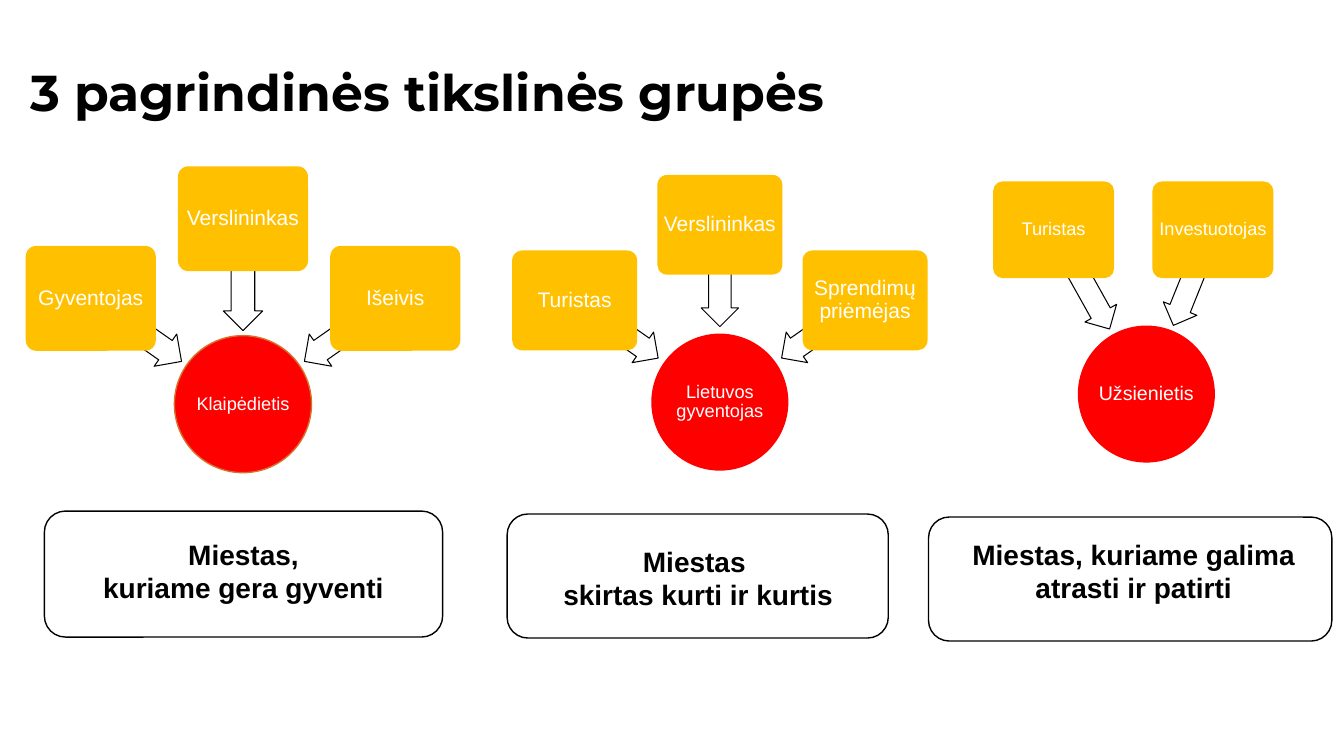
from pptx import Presentation
from pptx.dml.color import RGBColor
from pptx.enum.shapes import MSO_SHAPE as Kind
from pptx.enum.text import MSO_ANCHOR as Anchor, PP_ALIGN as Align
from pptx.util import Inches, Pt

# Content: cards and arrows are given from the hub's centre, in inches
TITLE = "3 pagrindinės tikslinės grupės"
GROUPS = [
    dict(hub="Klaipėdietis", at=(2.41, 4.01), size=13, edge="rim",
         card=(1.29, 1.04), type=15, arrow=0.39,
         cards=[("Gyventojas", -1.51, -1.05), ("Verslininkas", 0, -1.84),
                ("Išeivis", 1.51, -1.05)],
         arrows=[(-1.06, -0.74, 1.1, 215), (0, -1.28, 1.1, 270),
                 (1.06, -0.74, 1.1, 325)]),
    dict(hub="Lietuvos gyventojas", at=(7.14, 3.99), size=13, edge=None,
         card=(1.24, 0.99), type=15, arrow=0.37,
         cards=[("Turistas", -1.44, -1.01), ("Verslininkas", 0, -1.76),
                ("Sprendimų priėmėjas", 1.44, -1.01)],
         arrows=[(-1.03, -0.73, 1.02, 215), (0, -1.26, 1.02, 270),
                 (1.03, -0.73, 1.02, 325)]),
    dict(hub="Užsienietis", at=(11.37, 3.91), size=14, edge=None,
         card=(1.2, 0.96), type=13, arrow=0.36,
         cards=[("Turistas", -0.92, -1.63), ("Investuotojas", 0.66, -1.63)],
         arrows=[(-0.64, -1.14, 1.13, 240.8), (0.46, -1.16, 1.03, 291.9)]),
]
# Lines of text, text box, frame
GOALS = [
    (["Miestas,", "kuriame gera gyventi"],
     (0.49, 5.28, 3.85, 0.77), (0.44, 5.07, 3.95, 1.25)),
    (["Miestas ", "skirtas kurti ir kurtis"],
     (5.1, 5.35, 3.65, 0.77), (5.03, 5.1, 3.78, 1.23)),
    (["Miestas, kuriame galima atrasti ir patirti"],
     (9.46, 5.28, 3.57, 0.77), (9.21, 5.13, 4, 1.23)),
]
HUB = 1.36
COLORS = dict(hub="FF0000", rim="D7712C", card="FFC000",
              ink="000000", light="FFFFFF")

deck = Presentation()
deck.slide_width, deck.slide_height = Inches(13.33), Inches(7.5)
slide = deck.slides.add_slide(deck.slide_layouts[6])


def color(name):
    return RGBColor.from_string(COLORS[name])


def write(shape, lines, size, tone, font="Arial", bold=False,
          align=Align.CENTER, gap=0.9, anchor=Anchor.MIDDLE, inset=None):
    frame = shape.text_frame
    frame.word_wrap, frame.vertical_anchor = True, anchor
    if inset is not None:
        for side in ("left", "right", "top", "bottom"):
            setattr(frame, f"margin_{side}", Inches(inset))
    for i, line in enumerate(lines):
        para = frame.paragraphs[0] if i == 0 else frame.add_paragraph()
        para.alignment, para.line_spacing = align, gap
        run = para.add_run()
        run.text = line
        form = dict(name=font, size=Pt(size), bold=bold)
        for key, value in form.items():
            setattr(run.font, key, value)
        run.font.color.rgb = color(tone)


def draw(kind, box, fill=None, edge=None, width=1, adjust=()):
    shape = slide.shapes.add_shape(kind, *map(Inches, box))
    shape.shadow.inherit = False
    if fill:
        shape.fill.solid()
        shape.fill.fore_color.rgb = color(fill)
    else:
        shape.fill.background()
    if edge:
        shape.line.color.rgb = color(edge)
        shape.line.width = Pt(width)
    else:
        shape.line.fill.background()
    for i, value in enumerate(adjust):
        shape.adjustments[i] = value
    return shape


def label(box, lines, *args, **form):
    write(slide.shapes.add_textbox(*map(Inches, box)), lines, *args, **form)


def around(hub, dx, dy, wide, high):
    return hub[0] + dx - wide / 2, hub[1] + dy - high / 2, wide, high


# Title
label((0.2, 0.22, 11.5, 1.45), [TITLE], 36, "ink", font="Montserrat",
      bold=True, align=Align.LEFT)

# Audience groups: hub, then arrows, then cards on top
for group in GROUPS:
    mid = group["at"]
    hub = draw(Kind.OVAL, around(mid, 0, 0, HUB, HUB), "hub", group["edge"])
    write(hub, [group["hub"]], group["size"], "light", inset=0)
    for dx, dy, length, turn in group["arrows"]:
        arrow = draw(Kind.LEFT_ARROW,
                     around(mid, dx, dy, length, group["arrow"]),
                     edge="ink", width=0.75, adjust=(0.6, 0.5))
        arrow.rotation = turn
    for name, dx, dy in group["cards"]:
        card = draw(Kind.ROUNDED_RECTANGLE,
                    around(mid, dx, dy, *group["card"]), "card", adjust=(0.1,))
        write(card, [name], group["type"], "light", inset=0.03)

# Goals
for lines, box, frame in GOALS:
    label(box, lines, 20, "ink", bold=True, gap=1, anchor=Anchor.TOP)
    draw(Kind.ROUNDED_RECTANGLE, frame, edge="ink")

deck.save("out.pptx")
